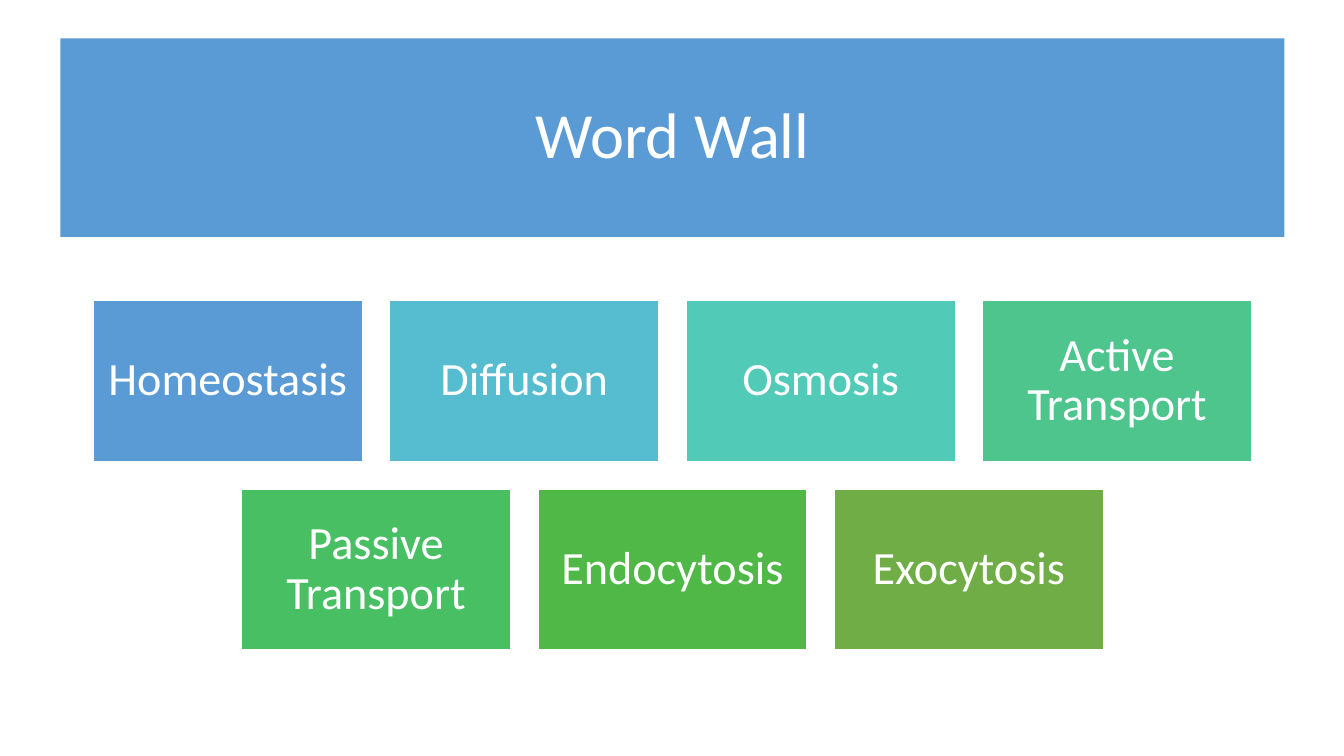
import dataclasses

import pptx
import pptx.dml.color
import pptx.enum.shapes
import pptx.enum.text
import pptx.util

Inches = pptx.util.Inches


@dataclasses.dataclass(frozen=True)
class Theme:
    font: str = "Calibri"
    white: str = "FFFFFF"
    blue: str = "5B9BD5"
    cyan: str = "56BCD0"
    teal: str = "52CAB8"
    mint: str = "4DC58D"
    jade: str = "49BF64"
    green: str = "50B846"
    olive: str = "70AD47"
    title: int = 46
    word: int = 33


class Wall:
    def __init__(self, theme, slide):
        self.theme = theme
        self.slide = slide

    def tint(self, color):
        return pptx.dml.color.RGBColor.from_string(color)

    def block(self, text, box, fill, size, inset, edge=0):
        """Draw a filled box with centred text; edge is the white outline in points."""
        shape = self.slide.shapes.add_shape(
            pptx.enum.shapes.MSO_SHAPE.RECTANGLE, *map(Inches, box))
        shape.shadow.inherit = False
        shape.fill.solid()
        shape.fill.fore_color.rgb = self.tint(fill)
        if edge:
            shape.line.color.rgb = self.tint(self.theme.white)
            shape.line.width = pptx.util.Pt(edge)
        else:
            shape.line.fill.background()
        frame = shape.text_frame
        frame.word_wrap = True
        frame.vertical_anchor = pptx.enum.text.MSO_ANCHOR.MIDDLE
        frame.margin_left = frame.margin_right = Inches(inset)
        frame.margin_top = frame.margin_bottom = Inches(inset)
        para = frame.paragraphs[0]
        para.alignment = pptx.enum.text.PP_ALIGN.CENTER
        para.line_spacing = 0.9
        run = para.add_run()
        run.text = text
        run.font.name = self.theme.font
        run.font.size = pptx.util.Pt(size)
        run.font.color.rgb = self.tint(self.theme.white)

    def title(self, text):
        self.block(text, (0.6, 0.38, 12.14, 1.97), self.theme.blue,
                   self.theme.title, 0.1)

    def row(self, cards, top):
        """Lay out one row of cards, centred under the title."""
        mid, wide, high, gap = 6.67, 2.67, 1.6, 0.27
        step = wide + gap
        left = mid - (len(cards) * step - gap) / 2
        for col, (text, fill) in enumerate(cards):
            self.block(text, (left + col * step, top, wide, high), fill,
                       self.theme.word, 0.14, edge=1)


def main():
    deck = pptx.Presentation()
    deck.slide_width = Inches(13.33)
    deck.slide_height = Inches(7.5)
    theme = Theme()
    wall = Wall(theme, deck.slides.add_slide(deck.slide_layouts[6]))
    wall.title("Word Wall")
    wall.row([
        ("Homeostasis", theme.blue),
        ("Diffusion", theme.cyan),
        ("Osmosis", theme.teal),
        ("Active Transport", theme.mint),
    ], 2.98)
    wall.row([
        ("Passive Transport", theme.jade),
        ("Endocytosis", theme.green),
        ("Exocytosis", theme.olive),
    ], 4.85)
    deck.save("out.pptx")


if __name__ == "__main__":
    main()
